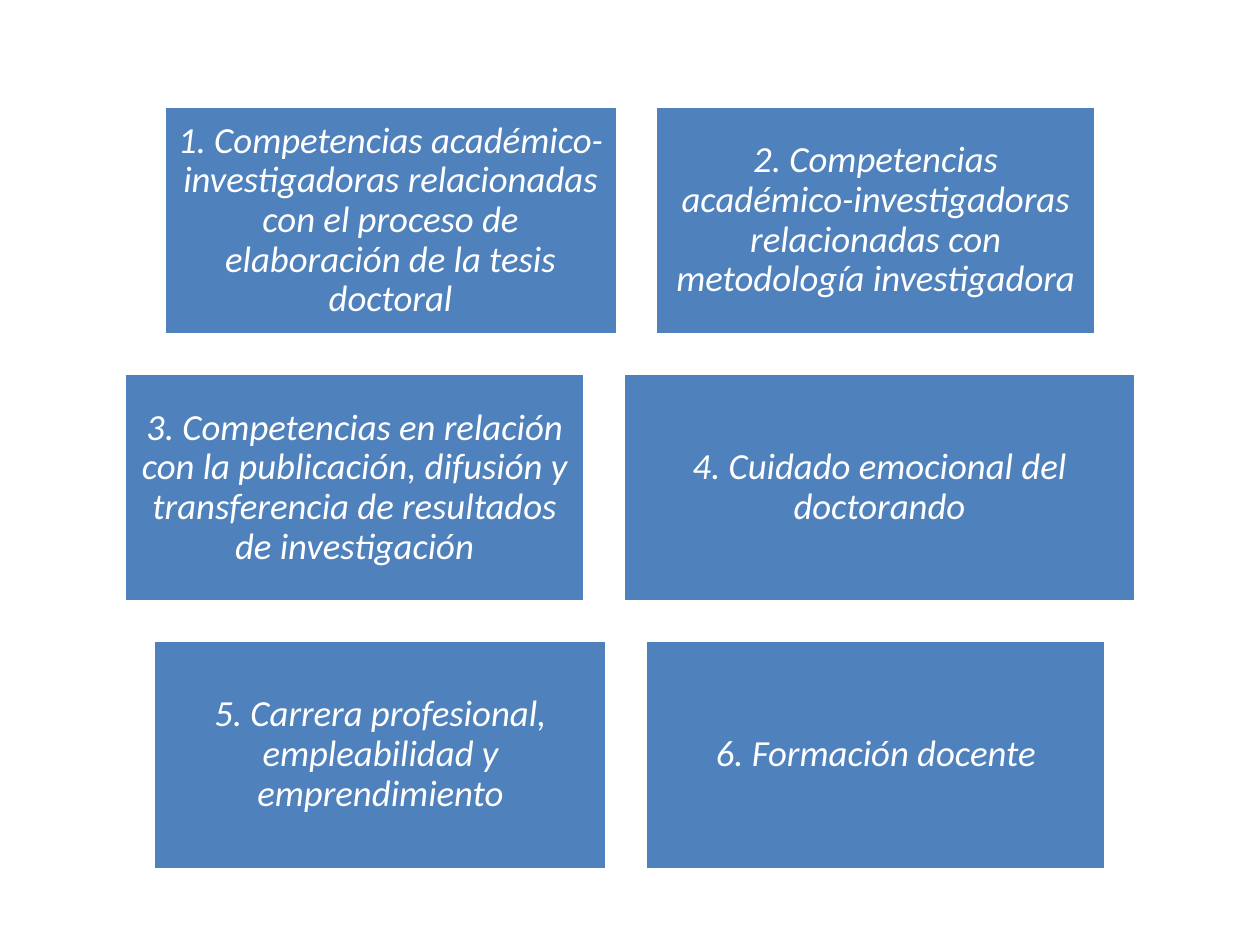
from pptx import Presentation
from pptx import util as u
from pptx.dml.color import RGBColor
from pptx.enum import shapes, text

BLUE = RGBColor(0x4F, 0x81, 0xBD)
WHITE = RGBColor(0xFF, 0xFF, 0xFF)

ROWS = [
    [("1. Competencias académico-investigadoras relacionadas con el proceso "
      "de elaboración de la tesis doctoral", 3.6),
     ("2. Competencias académico-investigadoras relacionadas con "
      "metodología investigadora", 3.5)],
    [("3. Competencias en relación con la publicación, difusión y "
      "transferencia de resultados de investigación", 3.66),
     ("4. Cuidado emocional del doctorando", 4.07)],
    [("5. Carrera profesional, empleabilidad y emprendimiento", 3.6),
     ("6. Formación docente", 3.66)],
]
SLIDE_W, SLIDE_H = 10, 7.5
TOP, BOX_H, GAP = 0.84, 1.82, 0.3

FRAME = {"word_wrap": True, "vertical_anchor": text.MSO_ANCHOR.MIDDLE}
FRAME.update({f"margin_{side}": u.Inches(0.09)
              for side in ("left", "right", "top", "bottom")})
PARAGRAPH = {"alignment": text.PP_ALIGN.CENTER, "line_spacing": 0.9}
FONT = {"name": "Calibri", "size": u.Pt(21), "italic": True}


def apply(obj, values):
    for name, value in values.items():
        setattr(obj, name, value)


def add_box(s, label, left, top, width):
    sp = s.shapes.add_shape(shapes.MSO_SHAPE.RECTANGLE, u.Inches(left),
                            u.Inches(top), u.Inches(width), u.Inches(BOX_H))
    sp.shadow.inherit = False
    sp.fill.solid()
    sp.fill.fore_color.rgb = BLUE
    sp.line.color.rgb = WHITE
    sp.line.width = u.Pt(2)
    tf = sp.text_frame
    apply(tf, FRAME)
    p = tf.paragraphs[0]
    apply(p, PARAGRAPH)
    r = p.add_run()
    r.text = label
    apply(r.font, FONT)
    r.font.color.rgb = WHITE


def main():
    prs = Presentation()
    prs.slide_width, prs.slide_height = u.Inches(SLIDE_W), u.Inches(SLIDE_H)
    s = prs.slides.add_slide(prs.slide_layouts[6])
    for i, row in enumerate(ROWS):
        row_w = sum(width for _, width in row) + GAP * (len(row) - 1)
        left = (SLIDE_W - row_w) / 2
        for label, width in row:
            add_box(s, label, left, TOP + i * (BOX_H + GAP), width)
            left += width + GAP
    prs.save("out.pptx")


if __name__ == "__main__":
    main()
